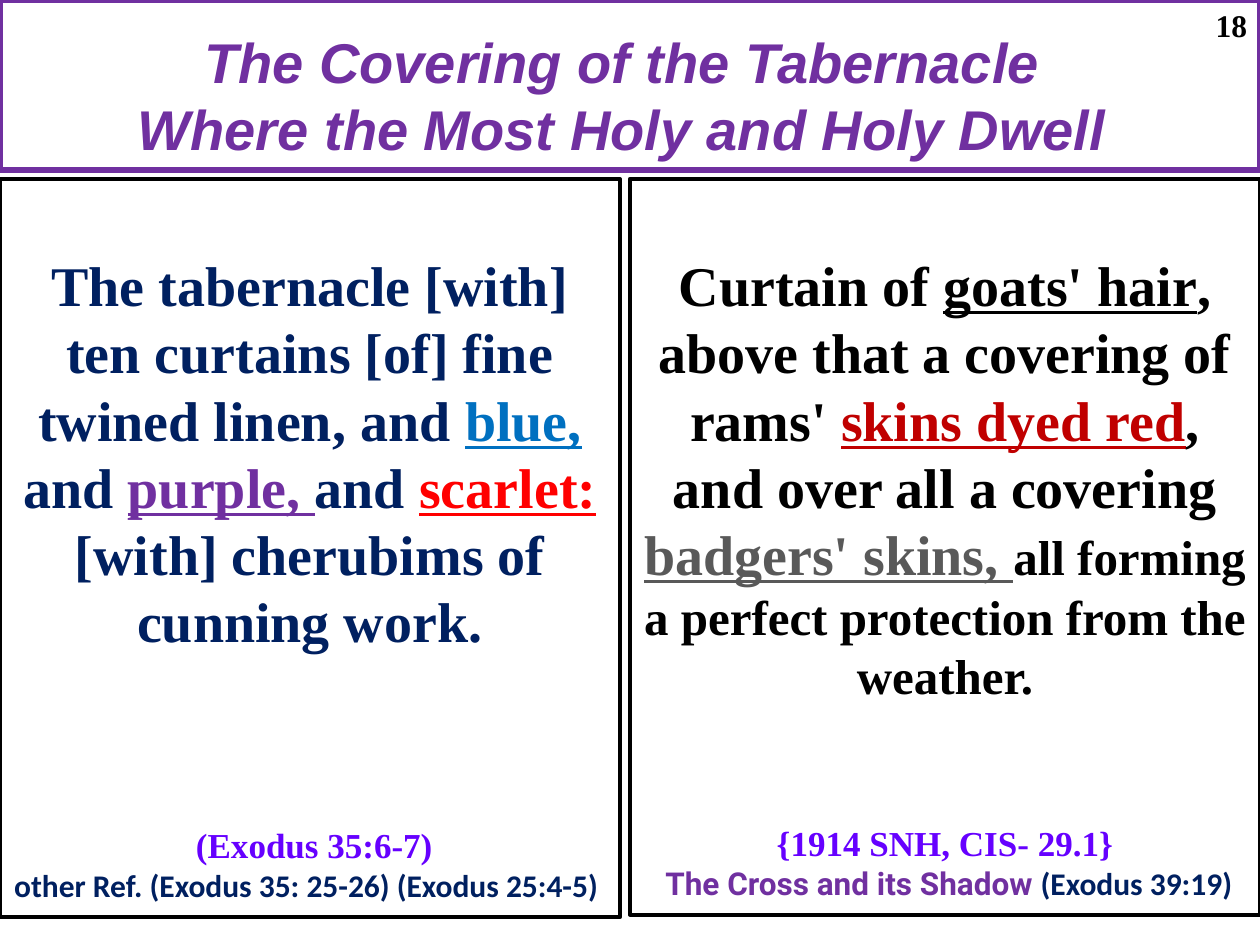
import pptx
import pptx.dml.color
import pptx.enum.shapes
import pptx.enum.text
import pptx.util

RGB = pptx.dml.color.RGBColor
BLACK = RGB(0x00, 0x00, 0x00)
PURPLE = RGB(0x70, 0x30, 0xA0)
NAVY = RGB(0x00, 0x20, 0x60)
BLUE = RGB(0x00, 0x70, 0xC0)
RED = RGB(0xFF, 0x00, 0x00)
DARK_RED = RGB(0xC0, 0x00, 0x00)
GRAY = RGB(0x59, 0x59, 0x59)
VIOLET = RGB(0x66, 0x00, 0xFF)
PX = 9144
SERIF = "Times New Roman"
CENTER = pptx.enum.text.PP_ALIGN.CENTER
LEFT = pptx.enum.text.PP_ALIGN.LEFT


class Deck:
    """Draws framed and free text on the current slide in one style."""

    def __init__(self, slide, font=SERIF, size=32):
        self.s = slide
        self.font = font
        self.size = size

    def run(self, p, text, color, size=None, font=None, underline=False, italic=False):
        r = p.add_run()
        r.text = text
        r.font.name = font or self.font
        r.font.size = pptx.util.Pt(size or self.size)
        r.font.bold, r.font.italic = True, italic
        r.font.underline = underline
        r.font.color.rgb = color

    def paragraph(self, tf, runs, first=False, before=0, align=CENTER):
        p = tf.paragraphs[0] if first else tf.add_paragraph()
        p.alignment = align
        p.space_before = pptx.util.Pt(before)
        for text, color, *style in runs:
            self.run(p, text, color, *style)
        return p

    def frame(self, x, y, w, h, color, weight, top):
        sp = self.s.shapes.add_shape(
            pptx.enum.shapes.MSO_SHAPE.RECTANGLE, x * PX, y * PX, w * PX, h * PX)
        sp.shadow.inherit = False
        sp.fill.background()
        sp.line.color.rgb = color
        sp.line.width = pptx.util.Pt(weight)
        tf = sp.text_frame
        tf.word_wrap = True
        tf.vertical_anchor = pptx.enum.text.MSO_ANCHOR.TOP
        tf.margin_top = top * PX
        return tf

    def title(self, lines):
        tf = self.frame(0, 0, 1000, 135, PURPLE, 3, 22)
        p = self.paragraph(tf, [], first=True)
        for i, line in enumerate(lines):
            if i:
                p.add_line_break()
            self.run(p, line, PURPLE, font="Arial", italic=True)

    def panel(self, x, w, h, body, gap, source, reference):
        tf = self.frame(x, 142, w, h, BLACK, 2.25, 57)
        self.paragraph(tf, body, first=True)
        self.paragraph(tf, [(source, VIOLET, 20)], before=gap)
        self.paragraph(tf, reference)

    def number(self, x, y, w, h, text):
        tf = self.s.shapes.add_textbox(x * PX, y * PX, w * PX, h * PX).text_frame
        tf.word_wrap = False
        self.paragraph(tf, [(text, BLACK, 18)], first=True, align=LEFT)


def main():
    prs = pptx.Presentation()
    prs.slide_width, prs.slide_height = 1000 * PX, 750 * PX
    deck = Deck(prs.slides.add_slide(prs.slide_layouts[6]))
    deck.title(["The Covering of the Tabernacle ", "Where the Most Holy and Holy Dwell "])
    deck.panel(
        0, 492, 586,
        [("The tabernacle [with] ten curtains [of] fine twined linen, and ", NAVY),
         ("blue, ", BLUE, 32, SERIF, True),
         ("and ", NAVY),
         ("purple, ", PURPLE, 32, SERIF, True),
         ("and ", NAVY),
         ("scarlet: ", RED, 32, SERIF, True),
         ("[with] cherubims of cunning work.", NAVY)],
        97, " (Exodus 35:6-7)",
        [("other Ref. (Exodus 35: 25-26) (Exodus 25:4-5) ", NAVY, 18, "Calibri")])
    deck.panel(
        500, 500, 584,
        [("Curtain of ", BLACK),
         ("goats' hair", BLACK, 32, SERIF, True),
         (", above that a covering of rams' ", BLACK),
         ("skins dyed red", DARK_RED, 32, SERIF, True),
         (", and over all a covering ", BLACK),
         ("badgers' skins, ", GRAY, 32, SERIF, True),
         ("all forming a perfect protection from the weather.", BLACK, 28)],
        67, "{1914 SNH, CIS- 29.1}",
        [(" ", BLACK, 18),
         ("The Cross and its Shadow ", PURPLE, 18, "Roboto"),
         ("(Exodus 39:19)", NAVY, 18, "Calibri")])
    deck.number(955, 0, 45, 40, "18")
    prs.save("out.pptx")


if __name__ == "__main__":
    main()
